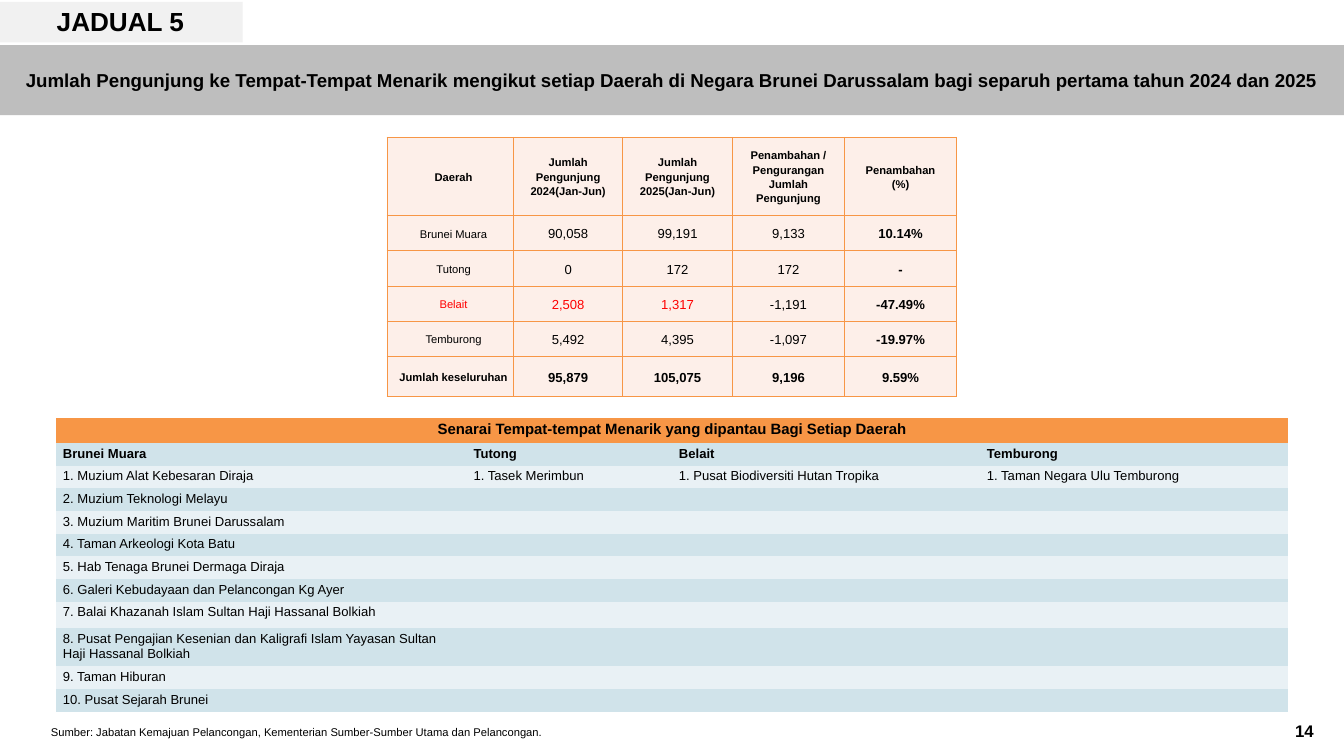
from lxml import etree
from pptx import Presentation
from pptx.dml.color import RGBColor
from pptx.enum import shapes, text
from pptx.oxml import ns
from pptx.util import Pt

COLORS = {
    "black": "000000", "red": "FF0000", "band": "BEBEBE", "tab": "F1F1F1",
    "orange": "F79646", "peach": "FDEFE9", "blue": "D0E3EA", "pale": "E9F1F5",
}
NO_STYLE = "{2D5ABB26-0587-4C30-8999-92F81FD0307C}"
LEFT, CENTER = text.PP_ALIGN.LEFT, text.PP_ALIGN.CENTER


def write(frame, content, size, bold=False, align=LEFT, color="black", spacing=None):
    """Fill a text frame, one paragraph for each line of content."""
    frame.text = content
    frame.word_wrap = True
    for paragraph in frame.paragraphs:
        paragraph.alignment = align
        if spacing:
            paragraph.line_spacing = spacing
        font = paragraph.font
        font.name, font.size, font.bold = "Arial", Pt(size), bold
        font.color.rgb = RGBColor.from_string(COLORS[color])
        if not content:
            # An empty cell takes its height from the end mark
            etree.SubElement(paragraph._p, ns.qn("a:endParaRPr"), sz=str(size * 100))


def add_plain_table(left, top, widths, heights):
    """Add a table without style or banding and return it."""
    frame = slide.shapes.add_table(len(heights), len(widths), Pt(left), Pt(top),
                                   Pt(sum(widths)), Pt(sum(heights)))
    table = frame.table
    table.first_row = table.horz_banding = False
    table._tbl.tblPr.find(ns.qn("a:tableStyleId")).text = NO_STYLE
    for column, width in zip(table.columns, widths):
        column.width = Pt(width)
    for row, height in zip(table.rows, heights):
        row.height = Pt(height)
    return table


presentation = Presentation()
presentation.slide_width, presentation.slide_height = Pt(1440), Pt(810)
slide = presentation.slides.add_slide(presentation.slide_layouts[5])

# Heading bands
for top, width, height, color in [(48.4, 1440, 75, "band"), (2, 260, 43.4, "tab")]:
    band = slide.shapes.add_shape(shapes.MSO_SHAPE.RECTANGLE, 0, Pt(top), Pt(width), Pt(height))
    band.shadow.inherit = False
    band.fill.solid()
    band.fill.fore_color.rgb = RGBColor.from_string(COLORS[color])
    band.line.fill.background()

# Title, moved in front of the bands, and the other single lines of text
title = slide.shapes.title
slide.shapes._spTree.append(title._element)
subtitle, page_number, source = (slide.shapes.add_textbox(0, 0, 0, 0) for _ in range(3))
for shape, content, left, top, width, height, size, bold, align, spacing in [
    (title, "JADUAL 5", 60.8, 5.6, 138, 35, 28, True, LEFT, None),
    (subtitle, "Jumlah Pengunjung ke Tempat-Tempat Menarik mengikut setiap Daerah di Negara "
     "Brunei Darussalam bagi separuh pertama tahun 2024 dan 2025",
     0, 73.6, 1440, 25, 20, True, CENTER, None),
    (page_number, "14", 1387.5, 769, 34, 22, 18, True, LEFT, 1.16),
    (source, "Sumber: Jabatan Kemajuan Pelancongan, Kementerian Sumber-Sumber Utama dan "
     "Pelancongan.", 54.5, 774, 531, 15, 12, False, LEFT, 1.19),
]:
    shape.left, shape.top, shape.width, shape.height = Pt(left), Pt(top), Pt(width), Pt(height)
    frame = shape.text_frame
    frame.margin_left = frame.margin_top = frame.margin_right = frame.margin_bottom = 0
    frame.vertical_anchor = text.MSO_ANCHOR.TOP
    frame.auto_size = text.MSO_AUTO_SIZE.NONE
    write(frame, content, size, bold, align, spacing=spacing)

# Monitored places in each district
places = [
    ["Senarai Tempat-tempat Menarik yang dipantau Bagi Setiap Daerah"],
    ["Brunei Muara", "Tutong", "Belait", "Temburong"],
    ["1. Muzium Alat Kebesaran Diraja", "1. Tasek Merimbun",
     "1. Pusat Biodiversiti Hutan Tropika", "1. Taman Negara Ulu Temburong"],
    ["2. Muzium Teknologi Melayu"],
    ["3. Muzium Maritim Brunei Darussalam"],
    ["4. Taman Arkeologi Kota Batu"],
    ["5. Hab Tenaga Brunei Dermaga Diraja"],
    ["6. Galeri Kebudayaan dan Pelancongan Kg Ayer"],
    ["7. Balai Khazanah Islam Sultan Haji Hassanal Bolkiah"],
    ["8. Pusat Pengajian Kesenian dan Kaligrafi Islam Yayasan Sultan Haji Hassanal Bolkiah"],
    ["9. Taman Hiburan"],
    ["10. Pusat Sejarah Brunei"],
]
table = add_plain_table(60.2, 448, [440, 220, 330, 330],
                        [26.5] + [24.3] * 7 + [28.5, 41] + [24.3] * 2)
table.cell(0, 0).merge(table.cell(0, 3))
for row, names in enumerate(places):
    fill = "orange" if row == 0 else "blue" if row % 2 else "pale"
    for column in range(4):
        cell = table.cell(row, column)
        cell.fill.solid()
        cell.fill.fore_color.rgb = RGBColor.from_string(COLORS[fill])
        if not cell.is_spanned:
            write(cell.text_frame, names[column] if column < len(names) else "",
                  14 if row else 16, row < 2, LEFT if row else CENTER)

# Visitor numbers in each district
visitors = [
    ["Daerah", "Jumlah Pengunjung\n2024(Jan-Jun)", "Jumlah Pengunjung\n2025(Jan-Jun)",
     "Penambahan / Pengurangan Jumlah Pengunjung", "Penambahan\n(%)"],
    ["Brunei Muara", "90,058", "99,191", "9,133", "10.14%"],
    ["Tutong", "0", "172", "172", "-"],
    ["Belait", "2,508", "1,317", "-1,191", "-47.49%"],
    ["Temburong", "5,492", "4,395", "-1,097", "-19.97%"],
    ["Jumlah keseluruhan", "95,879", "105,075", "9,196", "9.59%"],
]
table = add_plain_table(414.8, 147, [135.4, 117.2, 117.2, 120.6, 119.6],
                        [84] + [37.8] * 4 + [43])
for row, values in enumerate(visitors):
    for column, value in enumerate(values):
        cell = table.cell(row, column)
        is_label = row == 0 or column == 0
        cell.vertical_anchor = text.MSO_ANCHOR.MIDDLE
        cell.margin_left = Pt(5 if column else 12)
        cell.margin_right = Pt(5)
        cell.margin_top = cell.margin_bottom = Pt(0 if is_label else 5)
        write(cell.text_frame, value, 12 if is_label else 14,
              row in (0, 5) or column == 4, CENTER,
              "red" if row == 3 and column < 3 else "black", 1.15)
        properties = cell._tc.get_or_add_tcPr()
        for side in ("lnL", "lnR", "lnT", "lnB"):
            line = etree.SubElement(properties, ns.qn(f"a:{side}"), w=str(Pt(1)))
            line_fill = etree.SubElement(line, ns.qn("a:solidFill"))
            etree.SubElement(line_fill, ns.qn("a:srgbClr"), val=COLORS["orange"])
        cell.fill.solid()
        cell.fill.fore_color.rgb = RGBColor.from_string(COLORS["peach"])

presentation.save("out.pptx")
